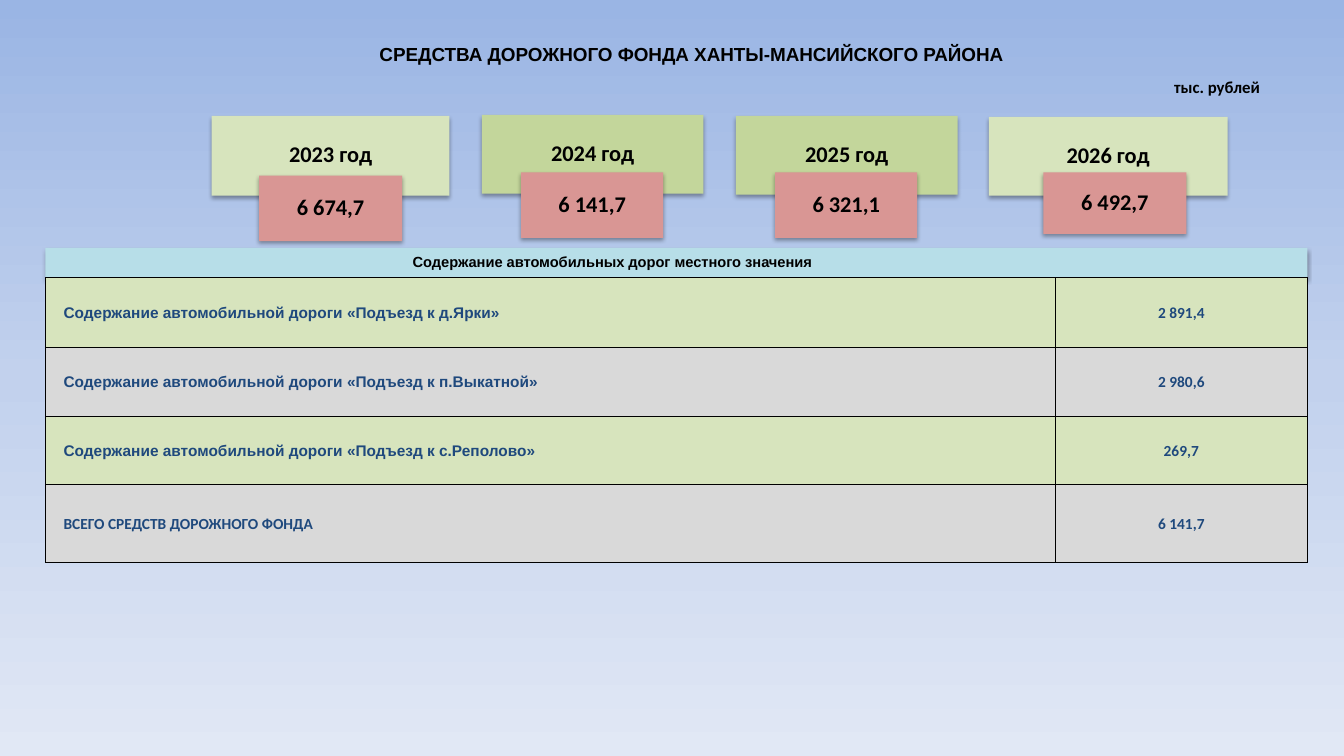
"""Build the slide on the road fund of the Khanty-Mansiysk district."""
from copy import deepcopy
from typing import NamedTuple

from lxml import etree
from pptx import Presentation
from pptx.dml.color import RGBColor
from pptx.enum.shapes import MSO_SHAPE
from pptx.enum.text import MSO_ANCHOR, PP_ALIGN
from pptx.oxml.ns import qn
from pptx.slide import Slide
from pptx.text.text import TextFrame
from pptx.util import Pt

RECT = MSO_SHAPE.RECTANGLE
MIDDLE = MSO_ANCHOR.MIDDLE
LEFT, CENTER = PP_ALIGN.LEFT, PP_ALIGN.CENTER
SANS, BODY = "Arial", "Calibri"
BLACK, NAVY = "000000", "1F497D"
LIME, GREEN, ROSE, AQUA, GRAY = "D7E4BD", "C3D69B", "D99694", "B7DEE8", "D9D9D9"
EDGE, WIDE = 32.4, 901.44


class Box(NamedTuple):
    left: float
    top: float
    width: float
    height: float


class Card(NamedTuple):
    text: str
    box: Box
    fill: str
    size: float = 16
    font: str = BODY
    right: float = 0.9


class Row(NamedTuple):
    label: str
    value: str
    height: float
    fill: str
    font: str


YEARS = [
    Card("2023 год", Box(151.2, 82.8, 169.9, 56.9), LIME),
    Card("2024 год", Box(344.16, 82.1, 158.4, 56.2), GREEN),
    Card("2025 год", Box(525.6, 82.8, 158.4, 56.2), GREEN),
    Card("2026 год", Box(706.3, 83.5, 170.6, 56.2), LIME),
]
SUMS = [
    Card("6 674,7", Box(185.04, 125.5, 102.2, 46.8), ROSE),
    Card("6 141,7", Box(372.24, 123.1, 101.5, 46.8), ROSE),
    Card("6 321,1", Box(553.7, 123.1, 101.5, 46.8), ROSE),
    Card("6 492,7", Box(745.2, 123.1, 102.2, 43.9), ROSE),
]
HEAD = Card("Содержание автомобильных дорог местного значения",
            Box(EDGE, 177.1, WIDE, 21.6), AQUA, 10.5, SANS, 92)
ROWS = [
    Row("Содержание автомобильной дороги «Подъезд к д.Ярки»",
        "2 891,4", 49.9, LIME, SANS),
    Row("Содержание автомобильной дороги «Подъезд к п.Выкатной»",
        "2 980,6", 49.2, GRAY, SANS),
    Row("Содержание автомобильной дороги «Подъезд к с.Реполово»",
        "269,7", 49, LIME, SANS),
    Row("ВСЕГО СРЕДСТВ ДОРОЖНОГО ФОНДА", "6 141,7", 55.6, GRAY, BODY),
]


def rgb(color: str) -> RGBColor:
    return RGBColor.from_string(color)


def spot(box: Box) -> list[Pt]:
    return [Pt(side) for side in box]


def write(frame: TextFrame, text: str, size: float, font: str,
          color: str = BLACK, align: PP_ALIGN = CENTER) -> None:
    frame.text = text
    frame.word_wrap = True
    line = frame.paragraphs[0]
    line.alignment = align
    face = line.runs[0].font
    face.size, face.name, face.bold = Pt(size), font, True
    face.color.rgb = rgb(color)


def ink(parent: etree._Element, color: str) -> etree._Element:
    return etree.SubElement(parent, qn("a:srgbClr"), val=color)


def paint(slide: Slide) -> None:
    fill = slide.background.fill
    fill.gradient()
    fill.gradient_angle = 270
    stops = slide.element.find(".//" + qn("a:gsLst"))
    stops.insert(1, deepcopy(stops[0]))
    shades = [(0, "9AB5E4"), (0.5, "C2D1ED"), (1, "E1E8F5")]
    for stop, (place, color) in zip(fill.gradient_stops, shades):
        stop.position = place
        stop.color.rgb = rgb(color)


def label(slide: Slide, box: Box, text: str, size: float, font: str,
          align: PP_ALIGN) -> TextFrame:
    frame = slide.shapes.add_textbox(*spot(box)).text_frame
    write(frame, text, size, font, align=align)
    return frame


def draw(slide: Slide, card: Card) -> None:
    shape = slide.shapes.add_shape(RECT, *spot(card.box))
    shape.fill.solid()
    shape.fill.fore_color.rgb = rgb(card.fill)
    shape.line.fill.background()
    shape.shadow.inherit = False
    glow = etree.SubElement(
        shape.element.spPr.find(qn("a:effectLst")), qn("a:outerShdw"),
        blurRad=str(Pt(3.1)), dist=str(Pt(1.8)), dir="5400000", rotWithShape="0")
    etree.SubElement(ink(glow, BLACK), qn("a:alpha"), val="35000")
    frame = shape.text_frame
    write(frame, card.text, card.size, card.font)
    frame.paragraphs[0].line_spacing = 0.9
    frame.vertical_anchor = MIDDLE
    frame.margin_left = frame.margin_top = frame.margin_bottom = Pt(0.9)
    frame.margin_right = Pt(card.right)


def tabulate(slide: Slide, rows: list[Row]) -> None:
    box = Box(EDGE, 198.2, WIDE, sum(row.height for row in rows))
    table = slide.shapes.add_table(len(rows), 2, *spot(box)).table
    table.first_row = table.horz_banding = False
    table.columns[0].width, table.columns[1].width = Pt(721.44), Pt(180)
    for index, row in enumerate(rows):
        table.rows[index].height = Pt(row.height)
        name, value = table.rows[index].cells
        write(name.text_frame, row.label, 11, row.font, NAVY, LEFT)
        write(value.text_frame, row.value, 11, BODY, NAVY)
        name.margin_left, name.margin_right = Pt(13), Pt(6.5)
        value.margin_left = value.margin_right = Pt(0.7)
        for cell in (name, value):
            cell.margin_top, cell.margin_bottom = Pt(0.7), 0
            cell.vertical_anchor = MIDDLE
            props = cell._tc.get_or_add_tcPr()
            for side in ("lnL", "lnR", "lnT", "lnB"):
                edge = etree.SubElement(props, qn("a:" + side), w=str(Pt(0.5)))
                ink(etree.SubElement(edge, qn("a:solidFill")), BLACK)
            cell.fill.solid()
            cell.fill.fore_color.rgb = rgb(row.fill)


def main() -> None:
    deck = Presentation()
    deck.slide_width, deck.slide_height = Pt(960), Pt(540)
    slide = deck.slides.add_slide(deck.slide_layouts[6])
    paint(slide)
    label(slide, Box(831.6, 51.1, 102.2, 21.6), "тыс. рублей", 12, BODY, LEFT)
    title = label(slide, Box(128.2, 20.9, 731.5, 35.3),
                  "СРЕДСТВА ДОРОЖНОГО ФОНДА ХАНТЫ-МАНСИЙСКОГО РАЙОНА",
                  13.5, SANS, CENTER)
    title.vertical_anchor = MIDDLE
    for card in [*YEARS, HEAD, *SUMS]:
        draw(slide, card)
    tabulate(slide, ROWS)
    deck.save("out.pptx")


if __name__ == "__main__":
    main()
